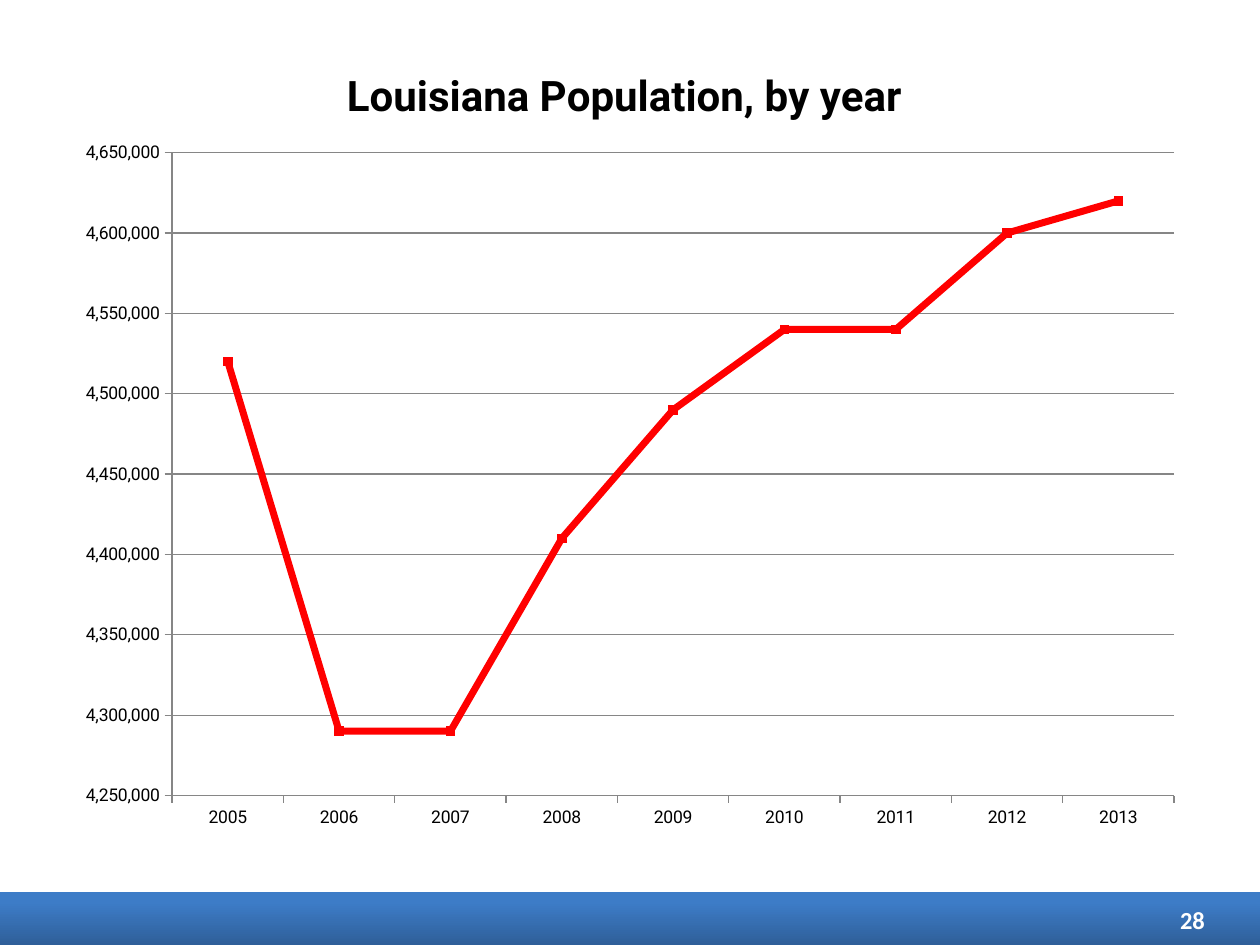
"""Build the Louisiana population line chart slide."""
from lxml import etree
from pptx import Presentation
from pptx.chart.data import CategoryChartData
from pptx.dml.color import RGBColor
from pptx.enum.chart import XL_CHART_TYPE, XL_MARKER_STYLE, XL_TICK_MARK
from pptx.enum.shapes import MSO_SHAPE
from pptx.enum.text import MSO_ANCHOR, PP_ALIGN
from pptx.oxml.ns import qn
from pptx.util import Cm, Pt

BLACK = RGBColor(0x00, 0x00, 0x00)
WHITE = RGBColor(0xFF, 0xFF, 0xFF)
RED = RGBColor(0xFF, 0x00, 0x00)
GRAY = RGBColor(0x86, 0x86, 0x86)
DARK_BLUE = RGBColor(0x2F, 0x5F, 0x99)
BLUE = RGBColor(0x3D, 0x7C, 0xC7)

CHART_WIDTH = Cm(22.86)
CHART_HEIGHT = Cm(16.18)

POPULATION = {
    "2005": 4520000,
    "2006": 4290000,
    "2007": 4290000,
    "2008": 4410000,
    "2009": 4490000,
    "2010": 4540000,
    "2011": 4540000,
    "2012": 4600000,
    "2013": 4620000,
}


def set_layout(parent, index, settings):
    for old in parent.findall(qn("c:layout")):
        parent.remove(old)
    layout = etree.Element(qn("c:layout"))
    manual = etree.SubElement(layout, qn("c:manualLayout"))
    for tag, value in settings.items():
        etree.SubElement(manual, qn(f"c:{tag}")).set("val", str(value))
    parent.insert(index, layout)


prs = Presentation()
prs.slide_width = Cm(25.4)
prs.slide_height = Cm(19.05)
slide = prs.slides.add_slide(prs.slide_layouts[6])

footer = slide.shapes.add_shape(MSO_SHAPE.RECTANGLE, Cm(0), Cm(17.98), Cm(25.4), Cm(1.07))
footer.shadow.inherit = False
footer.line.fill.background()
footer.fill.gradient()
footer.fill.gradient_angle = 90
for stop, color, position in zip(footer.fill.gradient_stops, (DARK_BLUE, BLUE), (0, 0.8)):
    stop.color.rgb = color
    stop.position = position

page_number = slide.shapes.add_textbox(Cm(18.62), Cm(18.03), Cm(5.92), Cm(1.02))
page_number.text_frame.word_wrap = True
page_number.text_frame.vertical_anchor = MSO_ANCHOR.MIDDLE
page_number.text_frame.text = "28"
page_line = page_number.text_frame.paragraphs[0]
page_line.alignment = PP_ALIGN.RIGHT
page_font = page_line.runs[0].font
page_font.name = "Calibri"
page_font.size = Pt(14)
page_font.bold = True
page_font.color.rgb = WHITE

data = CategoryChartData(number_format="#,##0")
data.categories = list(POPULATION)
data.add_series("Series 1", list(POPULATION.values()))
chart = slide.shapes.add_chart(
    XL_CHART_TYPE.LINE_MARKERS, Cm(1.27), Cm(0.84), CHART_WIDTH, CHART_HEIGHT, data
).chart
chart.has_legend = False
chart.font.name = "Roboto"
chart.font.size = Pt(10)
chart.font.color.rgb = BLACK

chart.has_title = True
chart.chart_title.text_frame.text = "Louisiana Population, by year"
title_font = chart.chart_title.text_frame.paragraphs[0].runs[0].font
title_font.name = "Roboto"
title_font.size = Pt(24)
title_font.bold = True
title_font.color.rgb = BLACK
chart.chart_title.include_in_layout = False

years = chart.category_axis
people = chart.value_axis
for axis in (years, people):
    axis.major_tick_mark = XL_TICK_MARK.OUTSIDE
    axis.minor_tick_mark = XL_TICK_MARK.NONE
    axis.format.line.color.rgb = GRAY
    axis.format.line.width = Pt(0.75)
people.minimum_scale = 4250000
people.maximum_scale = 4650000
people.major_unit = 50000
people.tick_labels.number_format = "#,##0"
people.tick_labels.number_format_is_linked = False
people.has_major_gridlines = True
people.major_gridlines.format.line.color.rgb = GRAY
people.major_gridlines.format.line.width = Pt(0.75)

plot = chart.plots[0]
plot.vary_by_categories = False
trend = plot.series[0]
trend.smooth = False
trend.format.line.color.rgb = RED
trend.format.line.width = Pt(4)
trend.marker.style = XL_MARKER_STYLE.SQUARE
trend.marker.size = 5
trend.marker.format.fill.solid()
trend.marker.format.fill.fore_color.rgb = RED
trend.marker.format.line.color.rgb = RED

plot_area = chart.element.find(".//" + qn("c:plotArea"))
set_layout(plot_area, 0, {
    "layoutTarget": "inner", "xMode": "edge", "yMode": "edge",
    "x": Cm(2.2) / CHART_WIDTH, "y": Cm(2.24) / CHART_HEIGHT,
    "w": Cm(20.2) / CHART_WIDTH, "h": Cm(12.96) / CHART_HEIGHT,
})
title = chart.element.find(".//" + qn("c:title"))
set_layout(title, 1, {
    "xMode": "edge", "yMode": "edge",
    "x": Cm(5.57) / CHART_WIDTH, "y": Cm(0.35) / CHART_HEIGHT,
})

prs.save("out.pptx")
